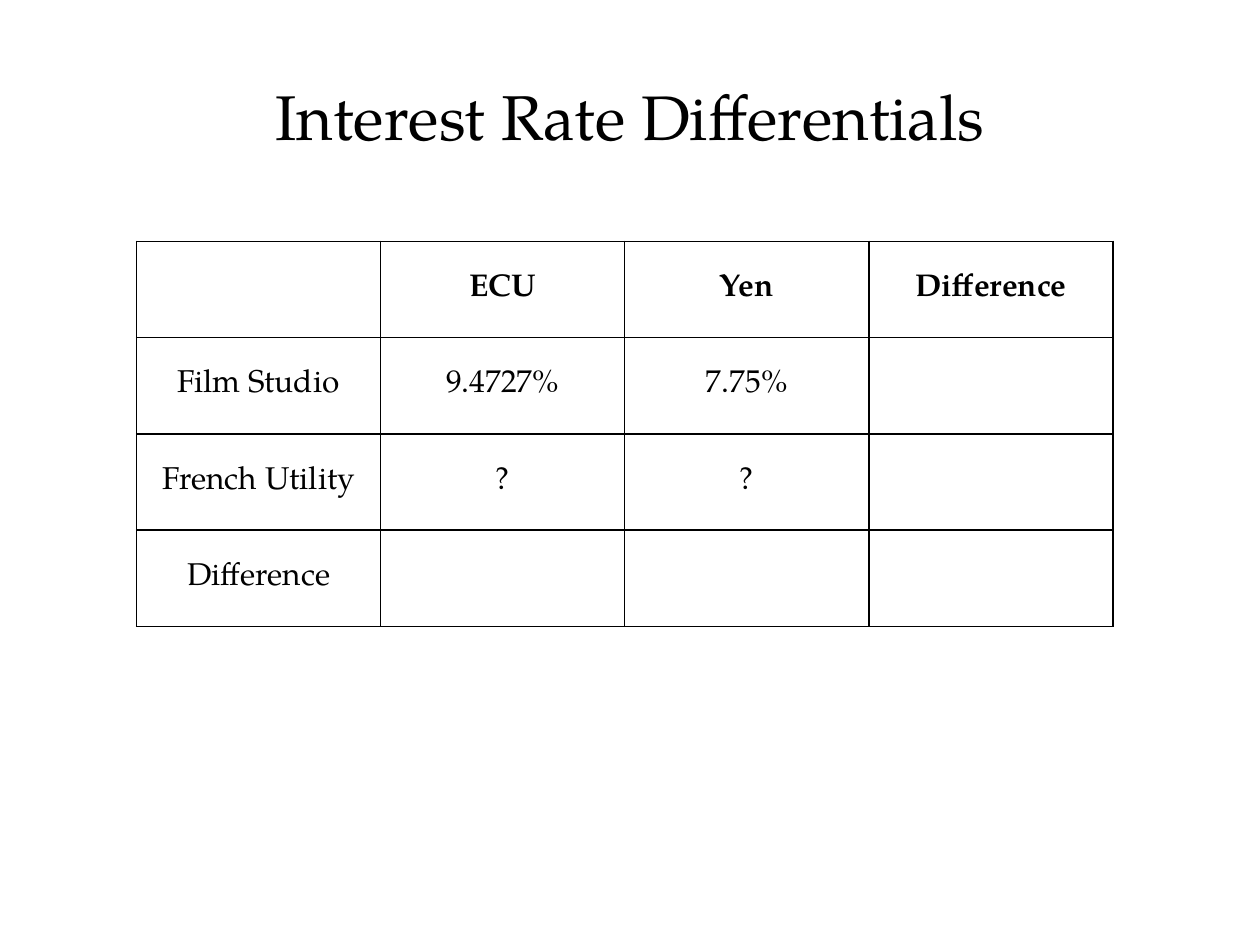
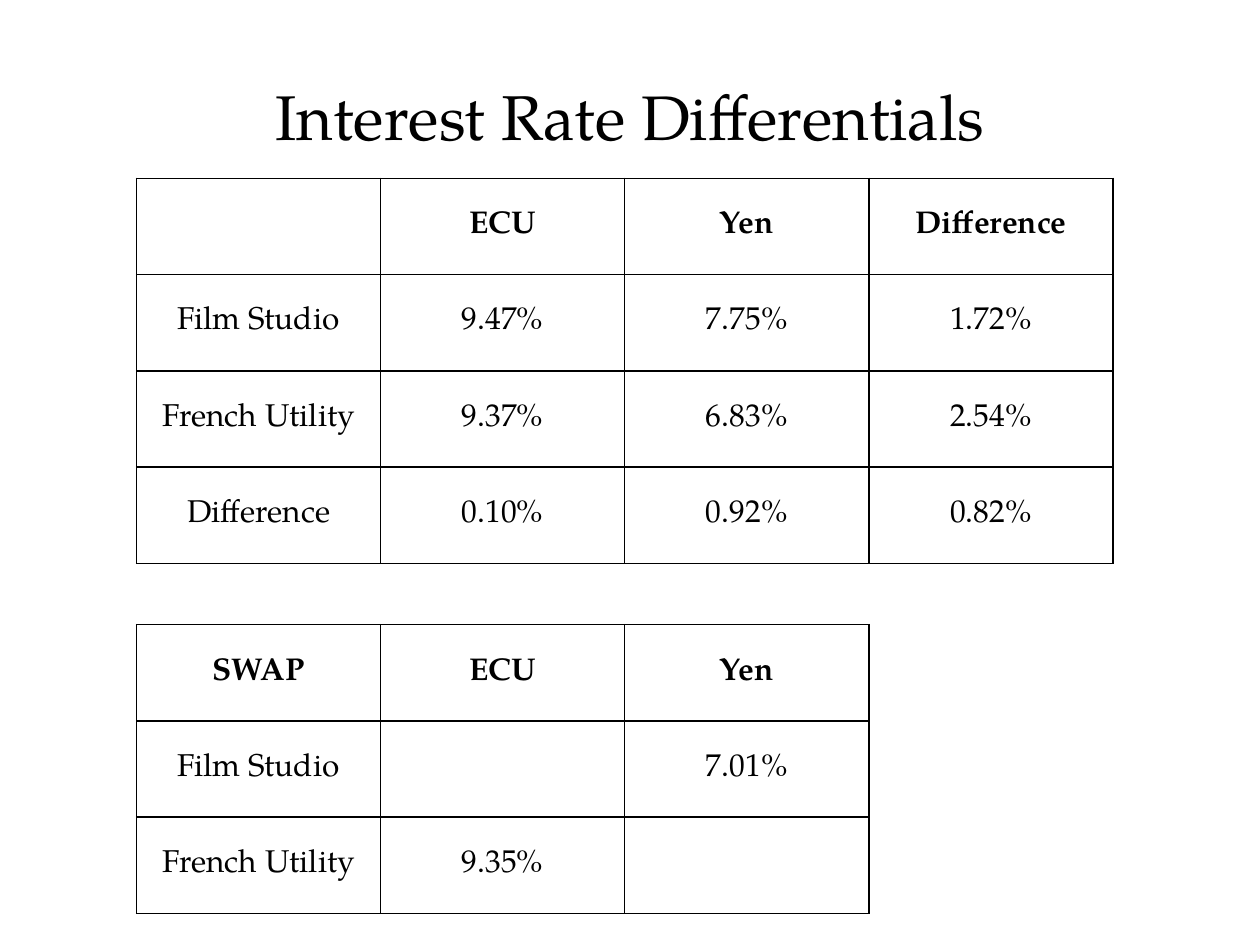
from lxml.etree import SubElement
from pptx import Presentation
from pptx.dml.color import RGBColor
from pptx.enum.text import MSO_ANCHOR, PP_ALIGN
from pptx.oxml.ns import qn
from pptx.util import Pt

EMU_PER_PX = 6350
BLACK = RGBColor(0x00, 0x00, 0x00)
WHITE = RGBColor(0xFF, 0xFF, 0xFF)
FONT = "TeX Gyre Pagella"
TITLE = "Interest Rate Differentials"
TABLE_LEFT = 156
COL_WIDTH = 279
ROW_HEIGHT = 110

STUDIO = "Film Studio"
UTILITY = "French Utility"
RATE_HEADER = ["", "ECU", "Yen", "Difference"]
OPEN_RATES = [
    RATE_HEADER,
    [STUDIO, "9.4727%", "7.75%", ""],
    [UTILITY, "?", "?", ""],
    ["Difference", "", "", ""],
]
SOLVED_RATES = [
    RATE_HEADER,
    [STUDIO, "9.47%", "7.75%", "1.72%"],
    [UTILITY, "9.37%", "6.83%", "2.54%"],
    ["Difference", "0.10%", "0.92%", "0.82%"],
]
SWAP_RATES = [
    ["SWAP", "ECU", "Yen"],
    [STUDIO, "", "7.01%"],
    [UTILITY, "9.35%", ""],
]


def px(*lengths):
    return [length * EMU_PER_PX for length in lengths]


def write_centred(tf, text, size, bold=False):
    tf.text = text
    p = tf.paragraphs[0]
    p.alignment = PP_ALIGN.CENTER
    for r in p.runs:
        r.font.name = FONT
        r.font.size = Pt(size)
        r.font.bold = bold
        r.font.color.rgb = BLACK


def style_cell(cell):
    cell.vertical_anchor = MSO_ANCHOR.MIDDLE
    tcPr = cell._tc.get_or_add_tcPr()
    for side in ("a:lnL", "a:lnR", "a:lnT", "a:lnB"):
        ln = SubElement(tcPr, qn(side), w=str(Pt(1)))
        line_fill = SubElement(ln, qn("a:solidFill"))
        SubElement(line_fill, qn("a:srgbClr"), val=str(BLACK))
    cell.fill.solid()
    cell.fill.fore_color.rgb = WHITE


def add_titled_slide(prs):
    s = prs.slides.add_slide(prs.slide_layouts[6])
    s.background.fill.solid()
    s.background.fill.fore_color.rgb = WHITE
    tf = s.shapes.add_textbox(*px(108, 60, 1224, 144)).text_frame
    tf.word_wrap = True
    tf.vertical_anchor = MSO_ANCHOR.MIDDLE
    write_centred(tf, TITLE, 36)
    return s


def add_rate_table(s, top, rows):
    n_rows, n_cols = len(rows), len(rows[0])
    box = px(TABLE_LEFT, top, n_cols * COL_WIDTH, n_rows * ROW_HEIGHT)
    table = s.shapes.add_table(n_rows, n_cols, *box).table
    table.horz_banding = False
    for i, row in enumerate(rows):
        for j, text in enumerate(row):
            cell = table.cell(i, j)
            write_centred(cell.text_frame, text, 18, bold=i == 0)
            style_cell(cell)


def main():
    prs = Presentation()
    prs.slide_width, prs.slide_height = px(1440, 1080)

    question = add_titled_slide(prs)
    add_rate_table(question, 276, OPEN_RATES)

    answer = add_titled_slide(prs)
    add_rate_table(answer, 204, SOLVED_RATES)
    add_rate_table(answer, 714, SWAP_RATES)

    prs.save("out.pptx")


if __name__ == "__main__":
    main()
